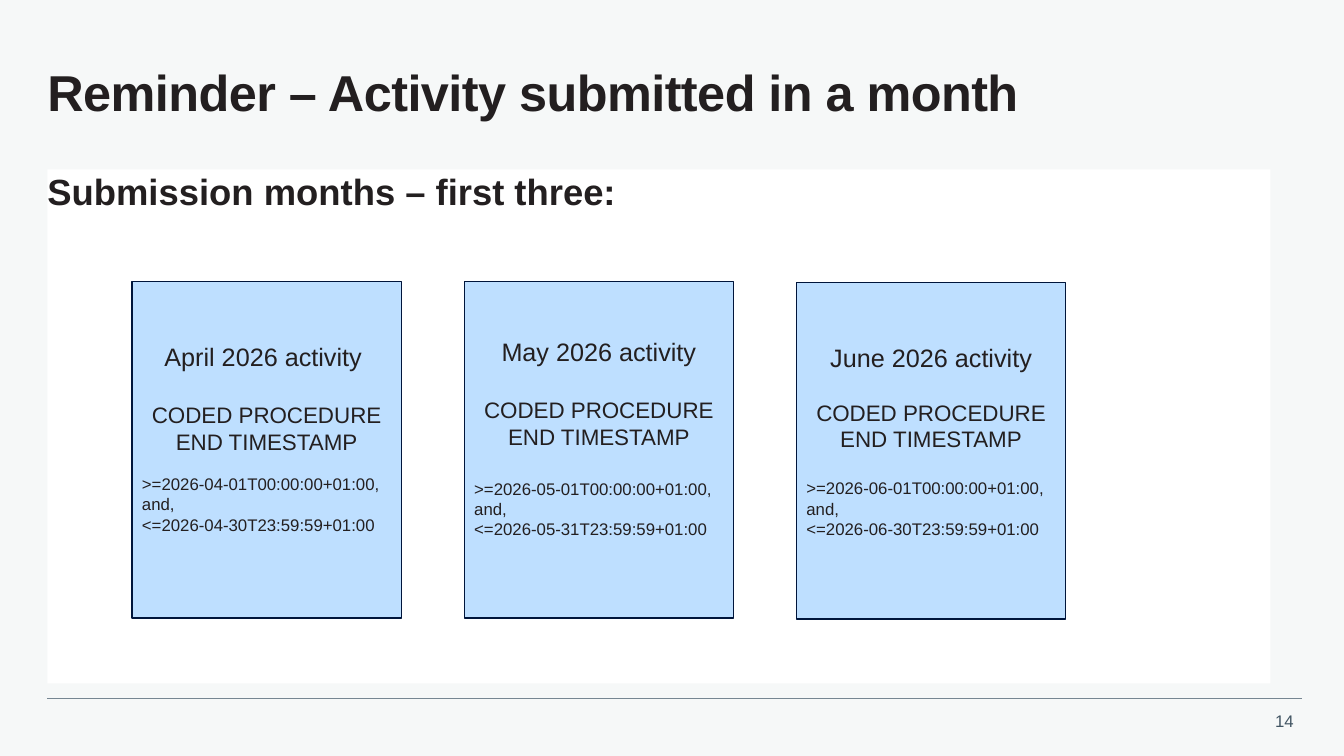
from dataclasses import dataclass

from lxml import etree
from pptx import Presentation
from pptx import util as u
from pptx.dml.color import RGBColor
from pptx.enum import shapes, text
from pptx.oxml.ns import qn


@dataclass(frozen=True)
class Theme:
    font: str = "Arial"
    back: str = "F6F8F8"
    panel: str = "FFFFFF"
    card: str = "BEDFFF"
    edge: str = "00153B"
    ink: str = "231F20"
    rule: str = "768692"
    muted: str = "425563"
    title: int = 36
    heading: int = 26
    month: int = 18
    field: int = 16
    small: int = 12


T = Theme()
W, H = 13.33, 7.5
LEFT = 0.47
CARD_W, CARD_H, CARD_STEP = 2.67, 3.34, 3.295
CARD_LEFT, CARD_TOP = 1.31, 2.79
CARDS = [
    ("April 2026 activity ", "2026-04-01", "2026-04-30", 0, 0.6, 20.7, 13.8),
    ("May 2026 activity", "2026-05-01", "2026-05-31", 0, 0.55, 20.7, 20.7),
    ("June 2026 activity", "2026-06-01", "2026-06-30", 0.01, 0.6, 18.4, 18.4),
]
ALIGN = text.PP_ALIGN
ANCHOR = text.MSO_ANCHOR


def rgb(value):
    return RGBColor.from_string(value)


def set_frame(tf, anchor=ANCHOR.TOP, side=0, top=0, wrap=True):
    tf.word_wrap = wrap
    tf.vertical_anchor = anchor
    tf.margin_left = tf.margin_right = u.Inches(side)
    tf.margin_top = u.Inches(top)
    tf.margin_bottom = 0


def write(p, words, size, color=T.ink, bold=False, align=ALIGN.LEFT, before=None):
    p.text = words
    p.alignment = align
    if before:
        p.space_before = u.Pt(before)
    p.font.name = T.font
    p.font.size = u.Pt(size)
    p.font.bold = bold
    p.font.color.rgb = rgb(color)


def add_rect(s, box, fill, line=None):
    sp = s.shapes.add_shape(shapes.MSO_SHAPE.RECTANGLE, *map(u.Inches, box))
    sp.shadow.inherit = False
    sp.fill.solid()
    sp.fill.fore_color.rgb = rgb(fill)
    if line:
        sp.line.color.rgb = rgb(line)
        sp.line.width = u.Pt(1)
    else:
        sp.line.fill.background()
    return sp


def add_title(s, box, words):
    tf = s.shapes.add_textbox(*map(u.Inches, box)).text_frame
    set_frame(tf, ANCHOR.MIDDLE)
    p = tf.paragraphs[0]
    write(p, words, T.title, bold=True)
    p.line_spacing = 0.9
    p.runs[0]._r.get_or_add_rPr().set("spc", "-40")


def add_panel(s, box, heading):
    tf = add_rect(s, box, T.panel).text_frame
    set_frame(tf)
    write(tf.paragraphs[0], heading, T.heading, bold=True)


def add_card(s, box, month, first, last, inset, field_gap, range_gap):
    tf = add_rect(s, box, T.card, T.edge).text_frame
    set_frame(tf, side=0.1, top=inset)
    lines = [
        (month, T.month, ALIGN.CENTER, None),
        ("CODED PROCEDURE END TIMESTAMP", T.field, ALIGN.CENTER, field_gap),
        (f">={first}T00:00:00+01:00, and,", T.small, ALIGN.LEFT, range_gap),
        (f"<={last}T23:59:59+01:00", T.small, ALIGN.LEFT, None),
    ]
    for i, (words, size, align, before) in enumerate(lines):
        p = tf.add_paragraph() if i else tf.paragraphs[0]
        write(p, words, size, align=align, before=before)


def add_footer(s, box, number):
    x, y, w, h = box
    cx = s.shapes.add_connector(
        shapes.MSO_CONNECTOR.STRAIGHT, *map(u.Inches, (x, y, x + w, y)))
    cx.line.color.rgb = rgb(T.rule)
    cx.line.width = u.Pt(0.5)
    etree.SubElement(cx._element.spPr, qn("a:effectLst"))
    num_w, num_h = 0.41, 0.3
    num = (x + w + 0.02 - num_w, y + 0.07, num_w, num_h)
    tf = s.shapes.add_textbox(*map(u.Inches, num)).text_frame
    set_frame(tf, side=0.1, top=0.05, wrap=False)
    write(tf.paragraphs[0], number, T.small, T.muted, align=ALIGN.RIGHT)


def main():
    prs = Presentation()
    prs.slide_width, prs.slide_height = u.Inches(W), u.Inches(H)
    s = prs.slides.add_slide(prs.slide_layouts[6])
    s.background.fill.solid()
    s.background.fill.fore_color.rgb = rgb(T.back)
    add_footer(s, (LEFT, 6.93, 12.44, 0.57), "14")
    add_panel(s, (LEFT, 1.68, 12.13, 5.1), "Submission months – first three:")
    add_title(s, (LEFT, 0.47, 12.47, 0.95), "Reminder – Activity submitted in a month")
    for i, (month, first, last, drop, *gaps) in enumerate(CARDS):
        box = (CARD_LEFT + i * CARD_STEP, CARD_TOP + drop, CARD_W, CARD_H)
        add_card(s, box, month, first, last, *gaps)
    prs.save("out.pptx")


if __name__ == "__main__":
    main()
